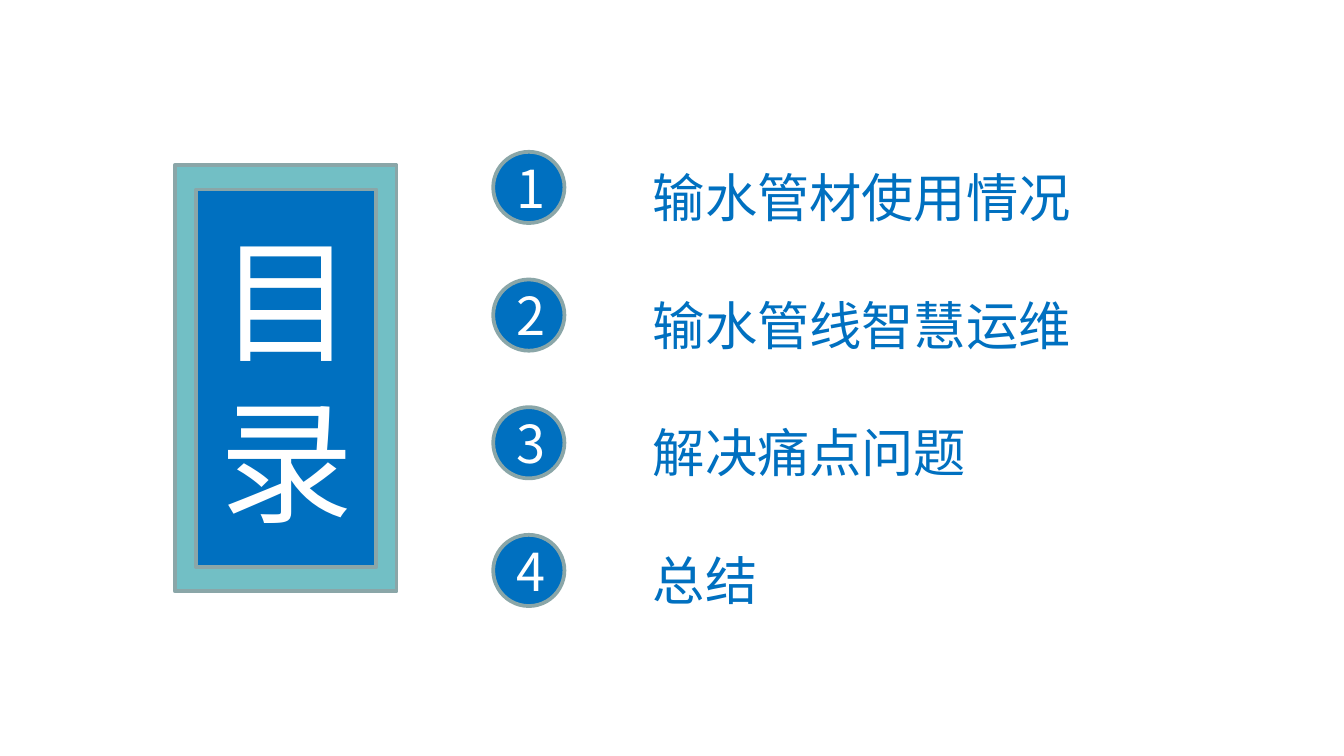
"""Build the contents slide with a vertical title panel and four numbered topics."""
import pptx
import pptx.dml.color
import pptx.enum.shapes
import pptx.enum.text
import pptx.util
from lxml import etree

Inches, Pt = pptx.util.Inches, pptx.util.Pt
RGBColor = pptx.dml.color.RGBColor
SHAPE = pptx.enum.shapes.MSO_SHAPE
ANCHOR = pptx.enum.text.MSO_ANCHOR
ALIGN = pptx.enum.text.PP_ALIGN
AUTO = pptx.enum.text.MSO_AUTO_SIZE

TITLE = ["目", "录"]
TOPICS = ["输水管材使用情况", "输水管线智慧运维", "解决痛点问题", "总结"]

BLUE = RGBColor(0x00, 0x70, 0xC0)
TEAL = RGBColor(0x72, 0xBF, 0xC5)
GREY = RGBColor(0x8A, 0xA6, 0xA8)
WHITE = RGBColor(0xFF, 0xFF, 0xFF)
FONT = "Noto Sans CJK SC"
A = "http://schemas.openxmlformats.org/drawingml/2006/main"

SLIDE_W = Inches(10)
SLIDE_H = SLIDE_W * 9 // 16
FRAME = (1.3, 1.23, 1.65, 3.17)
PANEL = (1.46, 1.41, 1.34, 2.81)
BADGE_X, BADGE_Y, BADGE = 3.67, 1.13, 0.53
TOPIC_X, TOPIC_Y, TOPIC_H = 4.76, 1.18, 0.57
TOPIC_WIDTHS = [3.54, 3.34, 2.56, 0.99]
STEP = 0.95


def assign(obj, values):
    for name, value in values.items():
        setattr(obj, name, value)


def place(sp, box):
    names = ("left", "top", "width", "height")
    assign(sp, dict(zip(names, map(Inches, box))))


def paint(sp, color):
    sp.fill.solid()
    sp.fill.fore_color.rgb = color
    sp.line.color.rgb = GREY
    sp.line.width = Pt(2)


def add_filled(s, kind, box, color):
    sp = s.shapes.add_shape(kind, *map(Inches, box))
    sp.shadow.inherit = False
    paint(sp, color)
    return sp


def write(sp, lines, size, color, align, frame):
    tf = sp.text_frame
    assign(tf, {"auto_size": AUTO.NONE, "word_wrap": True, **frame})
    for i, line in enumerate(lines):
        p = tf.paragraphs[0] if i == 0 else tf.add_paragraph()
        assign(p, {"alignment": align, "space_before": Pt(0)})
        r = p.add_run()
        r.text = line
        assign(r.font, {"name": FONT, "size": Pt(size)})
        r.font.color.rgb = color
        etree.SubElement(r.font._element, f"{{{A}}}ea", typeface=FONT)


def main():
    prs = pptx.Presentation()
    assign(prs, {"slide_width": SLIDE_W, "slide_height": SLIDE_H})
    s = prs.slides.add_slide(prs.slide_layouts.get_by_name("Title Only"))

    frame = add_filled(s, SHAPE.RECTANGLE, FRAME, TEAL)
    title = s.shapes.title
    title._element.addprevious(frame._element)
    place(title, PANEL)
    paint(title, BLUE)
    write(title, TITLE, 72, WHITE, ALIGN.CENTER, {"vertical_anchor": ANCHOR.MIDDLE})

    for i, (topic, width) in enumerate(zip(TOPICS, TOPIC_WIDTHS)):
        badge = add_filled(s, SHAPE.OVAL,
                           (BADGE_X, BADGE_Y + i * STEP, BADGE, BADGE), BLUE)
        write(badge, [str(i + 1)], 28, WHITE, ALIGN.CENTER,
              {"vertical_anchor": ANCHOR.MIDDLE, "margin_left": Inches(0.03),
               "margin_right": 0, "margin_top": 0, "margin_bottom": 0})
        box = (TOPIC_X, TOPIC_Y + i * STEP, width, TOPIC_H)
        label = s.shapes.add_textbox(*map(Inches, box))
        write(label, [topic], 28, BLUE, ALIGN.LEFT,
              {"word_wrap": i == 0, "auto_size": AUTO.SHAPE_TO_FIT_TEXT})

    prs.save("out.pptx")


if __name__ == "__main__":
    main()
